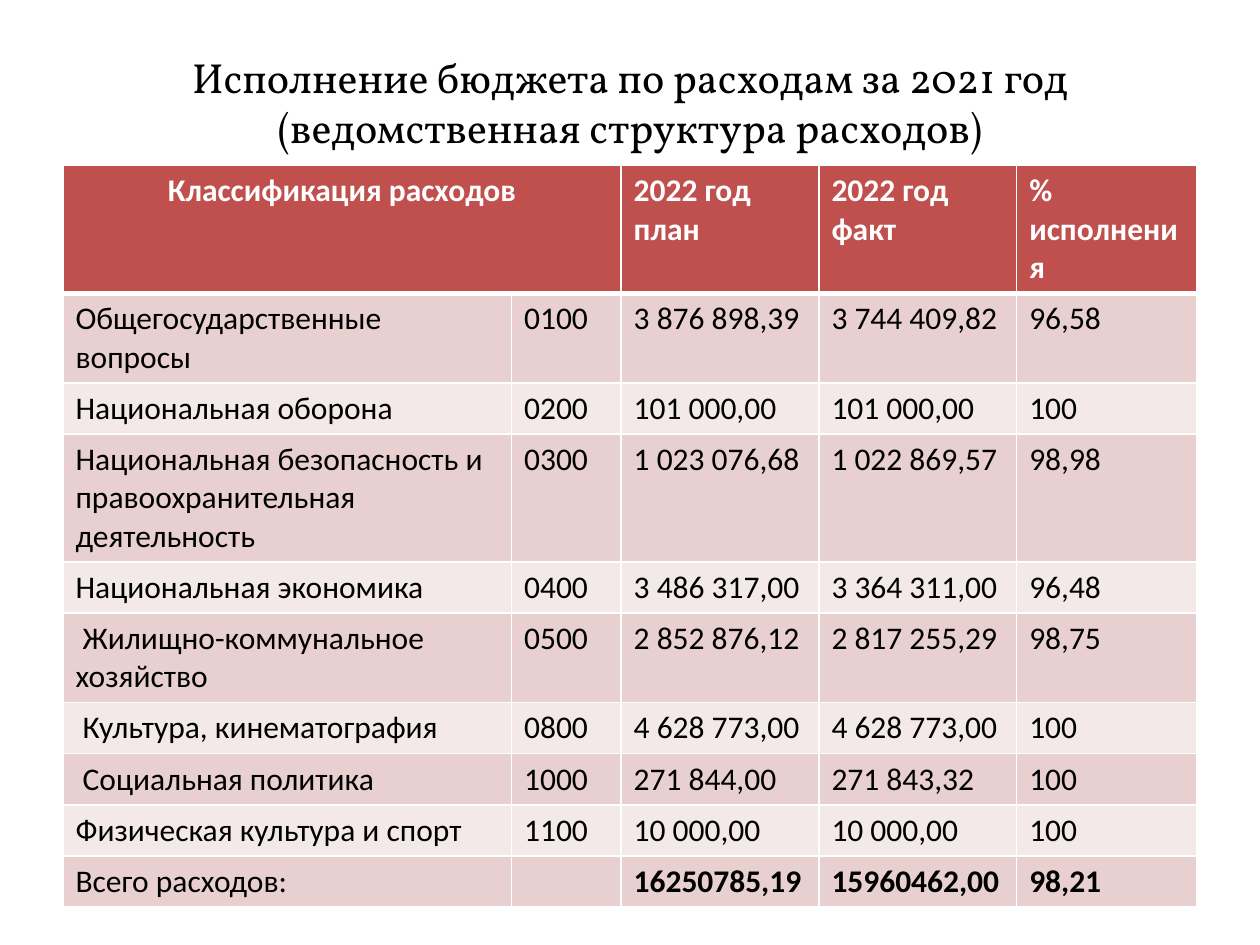
from dataclasses import dataclass, field

from lxml import etree
from pptx import Presentation
from pptx.dml.color import RGBColor
from pptx.enum.text import MSO_ANCHOR, MSO_AUTO_SIZE, PP_ALIGN
from pptx.oxml.ns import qn
from pptx.util import Inches, Pt

CENTER, LEFT = PP_ALIGN.CENTER, PP_ALIGN.LEFT
MIDDLE = MSO_ANCHOR.MIDDLE
NO_AUTOFIT = MSO_AUTO_SIZE.NONE
TITLE_ONLY = 5

WIDTH, HEIGHT = 10, 7.5
MARGIN = 0.05  # share of the slide width

TITLE = "Исполнение бюджета по расходам за 2021 год (ведомственная структура расходов)"
HEADINGS = ["Классификация расходов", "", "2022 год план", "2022 год факт", "% исполнения"]
EXPENSES = [
    ["Общегосударственные вопросы", "0100", "3 876 898,39", "3 744 409,82", "96,58"],
    ["Национальная оборона", "0200", "101 000,00", "101 000,00", "100"],
    ["Национальная безопасность и правоохранительная деятельность",
     "0300", "1 023 076,68", "1 022 869,57", "98,98"],
    ["Национальная экономика", "0400", "3 486 317,00", "3 364 311,00", "96,48"],
    [" Жилищно-коммунальное хозяйство", "0500", "2 852 876,12", "2 817 255,29", "98,75"],
    [" Культура, кинематография", "0800", "4 628 773,00", "4 628 773,00", "100"],
    [" Социальная политика", "1000", "271 844,00", "271 843,32", "100"],
    ["Физическая культура и спорт", "1100", "10 000,00", "10 000,00", "100"],
]
TOTAL = ["Всего расходов:", "", "16250785,19", "15960462,00", "98,21"]
COLUMN_WIDTHS = [3.56, 0.87, 1.57, 1.57, 1.43]
LINES_PER_ROW = [3, 2, 1, 3, 1, 2, 1, 1, 1, 1]


def color(hex_string):
    return RGBColor.from_string(hex_string)


def set_border(cell, side, width, hex_string):
    """Draw one cell edge; side is L, R, T or B, called in that order."""
    line = etree.SubElement(cell._tc.get_or_add_tcPr(), qn(f"a:ln{side}"), w=str(Pt(width)))
    fill = etree.SubElement(line, qn("a:solidFill"))
    etree.SubElement(fill, qn("a:srgbClr"), val=hex_string)


@dataclass
class BudgetSlide:
    slide: object
    title_font: str = "Vollkorn"
    table_font: str = "Calibri"
    title_size: int = 24
    table_size: int = 18
    text: str = "000000"
    light: str = "FFFFFF"
    header: str = "C0504D"
    bands: list = field(default_factory=lambda: ["E8D0D0", "F4E9E9"])
    line_height: float = 0.305
    cell_padding: float = 0.1

    def set_text(self, frame, words, font, size, hex_string, bold=False, align=LEFT):
        para = frame.paragraphs[0]
        if words:
            para.text = words
        para.alignment = align
        para.font.name = font
        para.font.size = Pt(size)
        para.font.bold = bold
        para.font.color.rgb = color(hex_string)

    def add_title(self, words, top, height):
        """Place the title between the side margins; top and height are shares."""
        title = self.slide.shapes.title
        title.left, title.width = Inches(MARGIN * WIDTH), Inches((1 - 2 * MARGIN) * WIDTH)
        title.top, title.height = Inches(top * HEIGHT), Inches(height * HEIGHT)
        frame = title.text_frame
        frame.word_wrap = True
        frame.auto_size = NO_AUTOFIT
        frame.vertical_anchor = MIDDLE
        self.set_text(frame, words, self.title_font, self.title_size, self.text, align=CENTER)

    def add_table(self, rows, column_widths, lines_per_row, top):
        heights = [self.cell_padding + self.line_height * lines for lines in lines_per_row]
        table = self.slide.shapes.add_table(
            len(rows), len(column_widths), Inches(MARGIN * WIDTH), Inches(top * HEIGHT),
            Inches(sum(column_widths)), Inches(sum(heights))).table
        for column, width in zip(table.columns, column_widths):
            column.width = Inches(width)
        for row, height in zip(table.rows, heights):
            row.height = Inches(height)
        table.cell(0, 0).merge(table.cell(0, 1))
        last = len(rows) - 1
        for row_index, values in enumerate(rows):
            for column_index, words in enumerate(values):
                self.format_cell(table.cell(row_index, column_index), words, row_index,
                                 bold=row_index == 0 or row_index == last and column_index > 1,
                                 align=CENTER if row_index == column_index == 0 else LEFT)

    def format_cell(self, cell, words, row_index, bold, align):
        is_header = row_index == 0
        self.set_text(cell.text_frame, words, self.table_font, self.table_size,
                      self.light if is_header else self.text, bold, align)
        widths = {"L": 1, "R": 1, "T": 3 if row_index == 1 else 1, "B": 3 if is_header else 1}
        for side, width in widths.items():
            set_border(cell, side, width, self.light)
        cell.fill.solid()
        cell.fill.fore_color.rgb = color(
            self.header if is_header else self.bands[(row_index - 1) % 2])


def main():
    deck = Presentation()
    deck.slide_width, deck.slide_height = Inches(WIDTH), Inches(HEIGHT)
    page = BudgetSlide(deck.slides.add_slide(deck.slide_layouts[TITLE_ONLY]))
    page.add_title(TITLE, top=0.04, height=0.135)
    page.add_table([HEADINGS, *EXPENSES, TOTAL], COLUMN_WIDTHS, LINES_PER_ROW, top=0.175)
    deck.save("out.pptx")


if __name__ == "__main__":
    main()
